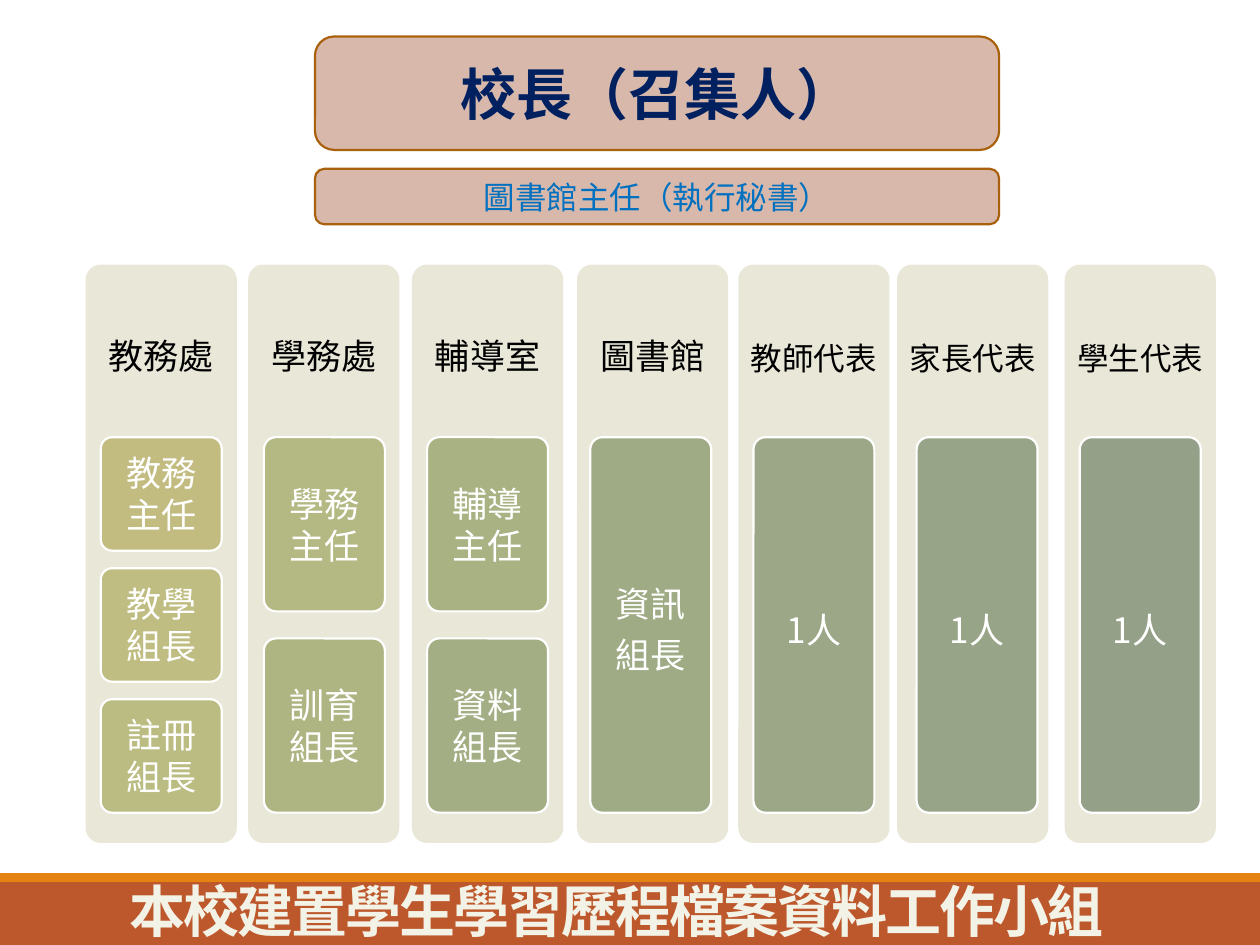
from pptx import Presentation
from pptx import util as u
from pptx.dml.color import RGBColor
from pptx.enum import shapes, text
from pptx.oxml.ns import qn

FONT = "Noto Sans CJK SC"
WHITE = RGBColor(0xFF, 0xFF, 0xFF)
BLACK = RGBColor(0x00, 0x00, 0x00)
NAVY = RGBColor(0x00, 0x20, 0x60)
BLUE = RGBColor(0x00, 0x70, 0xC0)
CREAM = RGBColor(0xF3, 0xF2, 0xE6)
RUST = RGBColor(0xBD, 0x58, 0x2C)
ORANGE = RGBColor(0xE4, 0x83, 0x12)
BROWN = RGBColor(0xA9, 0x61, 0x0D)
ROSE = RGBColor(0xD7, 0xB8, 0xAB)
SAND = RGBColor(0xE9, 0xE7, 0xD8)
CARD_FILLS = [RGBColor.from_string(code) for code in (
    "C2BC80 BFBD81 BABC81 B4B882 AEB582 A8B283 A3AE84 9FAB85 9BA786 97A487 94A088").split()]

# Panel left edge, heading, heading size, cards from top to bottom
COLUMNS = [
    (6.8, "教務處", 20, ["教務\v主任", "教學\v組長", "註冊\v組長"]),
    (19.7, "學務處", 20, ["學務\v主任", "訓育\v組長"]),
    (32.7, "輔導室", 20, ["輔導\v主任", "資料\v組長"]),
    (45.8, "圖書館", 20, ["資訊組長"]),
    (58.6, "教師代表", 18, ["1人"]),
    (71.2, "家長代表", 18, ["1人"]),
    (84.5, "學生代表", 18, ["1人"]),
]
PANEL_TOP, PANEL_WIDTH, PANEL_HEIGHT, HEADING_HEIGHT = 21, 12, 45.9, 13.8
CARD_LEFT, CARD_PITCH, CARD_TOP = 8, 12.95, 34.7
CARD_WIDTH, STACK_HEIGHT, GAP_SHARE = 9.6, 29.8, 0.155


class Chart:
    """Draws on one slide, measured on a grid of 100 columns and 75 rows."""

    def __init__(self, deck):
        self.slide = deck.slides.add_slide(deck.slide_layouts[6])
        self.cell = deck.slide_width / 100

    def place(self, *lengths):
        return [round(length * self.cell) for length in lengths]

    def block(self, area, fill, line=None, corner=None):
        """A filled rectangle, rounded when a corner share is given."""
        preset = shapes.MSO_SHAPE.RECTANGLE if corner is None else shapes.MSO_SHAPE.ROUNDED_RECTANGLE
        box = self.slide.shapes.add_shape(preset, *self.place(*area))
        box.shadow.inherit = False
        box.fill.solid()
        box.fill.fore_color.rgb = fill
        if corner is not None:
            box.adjustments[0] = corner
        if line is None:
            box.line.fill.background()
        else:
            box.line.color.rgb = line
            box.line.width = u.Pt(1.25)
        return box

    def label(self, area):
        return self.slide.shapes.add_textbox(*self.place(*area))

    def set_words(self, box, words, size, color, bold=False, spacing=None, inset=(1, 0.5),
                  align=text.PP_ALIGN.CENTER, anchor=text.MSO_ANCHOR.MIDDLE):
        frame = box.text_frame
        frame.word_wrap = True
        frame.vertical_anchor = anchor
        frame.margin_left = frame.margin_right = self.place(inset[0])[0]
        frame.margin_top = frame.margin_bottom = self.place(inset[1])[0]
        para = frame.paragraphs[0]
        para.text = words
        para.alignment = align
        para.line_spacing = spacing
        para.font.size = u.Pt(size)
        para.font.bold = bold
        para.font.color.rgb = color
        para.font.name = FONT
        for span in para.runs:
            span.font.name = FONT
            east_asian = span.font._element.makeelement(qn("a:ea"), {"typeface": FONT})
            span.font._element.append(east_asian)
        return para

    def column(self, index, left, heading, size, cards, fills):
        self.block((left, PANEL_TOP, PANEL_WIDTH, PANEL_HEIGHT), SAND, corner=0.1)
        inset = size / 25
        self.set_words(self.label((left, PANEL_TOP, PANEL_WIDTH, HEADING_HEIGHT)), heading, size,
                       BLACK, spacing=u.Pt(28.8), inset=(inset, inset))
        count = len(cards)
        height = STACK_HEIGHT / (count + GAP_SHARE * (count - 1))
        spacing = u.Pt(24 if count > 1 else 28.8)
        for row, words in enumerate(cards):
            top = CARD_TOP + row * height * (1 + GAP_SHARE)
            card = self.block((CARD_LEFT + index * CARD_PITCH, top, CARD_WIDTH, height),
                              next(fills), WHITE, 0.1)
            self.set_words(card, words, 20, WHITE, spacing=spacing, inset=(0.6, 0.4))


def main():
    deck = Presentation()
    deck.slide_width, deck.slide_height = u.Inches(10), u.Inches(7.5)
    chart = Chart(deck)

    chart.block((0, 70, 100, 5), RUST)
    chart.block((0, 69.3, 100, 0.7), ORANGE)
    title = chart.set_words(chart.label((9.3, 69.9, 81.5, 5.5)),
                            "本校建置學生學習歷程檔案資料工作小組",
                            32, CREAM, bold=True, spacing=0.85,
                            align=text.PP_ALIGN.LEFT, anchor=text.MSO_ANCHOR.TOP)
    title.runs[0].font._element.set("spc", "-120")

    fills = iter(CARD_FILLS)
    for index, column in enumerate(COLUMNS):
        chart.column(index, *column, fills)

    leader = chart.block((25, 2.9, 54.3, 9), ROSE, BROWN, 0.17)
    chart.set_words(leader, "校長（召集人）", 32, NAVY, bold=True)
    secretary = chart.block((25, 13.4, 54.3, 4.4), ROSE, BROWN, 0.17)
    chart.set_words(secretary, "圖書館主任（執行秘書）", 18, BLUE)

    deck.save("out.pptx")


if __name__ == "__main__":
    main()
